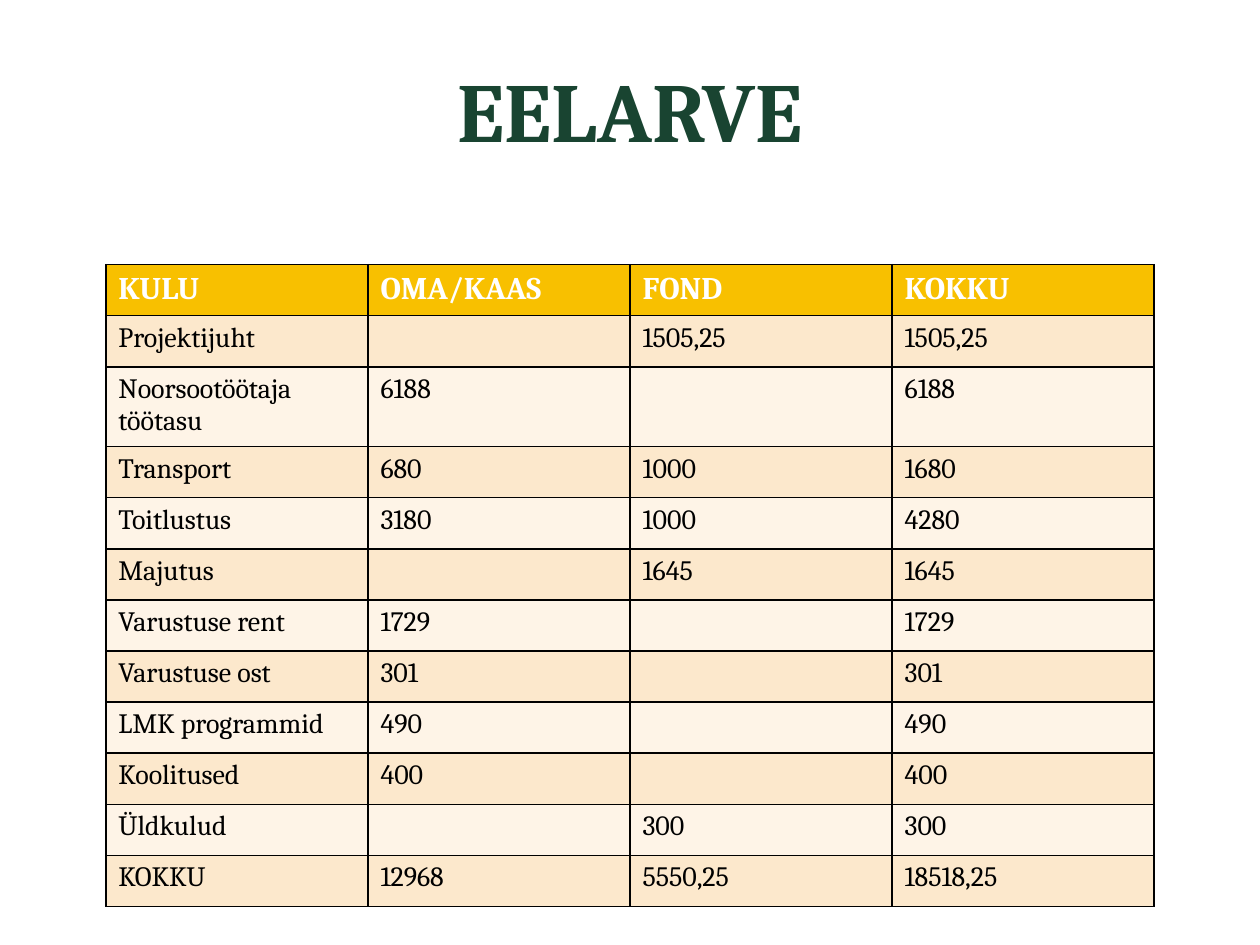
import pptx
import pptx.util
import pptx.dml.color
import pptx.enum.text
from pptx.oxml import parse_xml
from pptx.util import Inches

FONT = "Cambria"
NS = "http://schemas.openxmlformats.org/drawingml/2006/main"
COLORS = {
    "title": "194431", "head": "F8C000", "odd": "FCE8CC", "even": "FEF4E7",
    "white": "FFFFFF", "black": "000000",
}
ROWS = [
    ("KULU", "OMA/KAAS", "FOND", "KOKKU"),
    ("Projektijuht", "", "1505,25", "1505,25"),
    ("Noorsootöötaja töötasu", "6188", "", "6188"),
    ("Transport", "680", "1000", "1680"),
    ("Toitlustus", "3180", "1000", "4280"),
    ("Majutus", "", "1645", "1645"),
    ("Varustuse rent", "1729", "", "1729"),
    ("Varustuse ost", "301", "", "301"),
    ("LMK programmid", "490", "", "490"),
    ("Koolitused", "400", "", "400"),
    ("Üldkulud", "", "300", "300"),
    ("KOKKU", "12968", "5550,25", "18518,25"),
]


def color(name):
    return pptx.dml.color.RGBColor.from_string(COLORS[name])


def write(frame, text, size=16, ink="black", bold=False, align=None):
    para = frame.paragraphs[0]
    para.alignment = align
    para.font.size = pptx.util.Pt(size)
    if not text:
        return
    run = para.add_run()
    run.text = text
    font = run.font
    font.name, font.size, font.bold = FONT, pptx.util.Pt(size), bold
    font.color.rgb = color(ink)


def rule(cell):
    """Draw a 1 pt line on all four sides; call before setting the fill."""
    props = cell._tc.get_or_add_tcPr()
    for side in ("lnL", "lnR", "lnT", "lnB"):
        props.append(parse_xml(
            f'<a:{side} xmlns:a="{NS}" w="12700"><a:solidFill>'
            f'<a:srgbClr val="{COLORS["black"]}"/></a:solidFill></a:{side}>'))


def title(slide, left, top, width, height):
    frame = slide.shapes.add_textbox(left, top, width, height).text_frame
    frame.word_wrap = True
    frame.vertical_anchor = pptx.enum.text.MSO_ANCHOR.MIDDLE
    write(frame, "EELARVE", size=48, ink="title", bold=True,
          align=pptx.enum.text.PP_ALIGN.CENTER)


def budget(slide, left, top, width, height):
    table = slide.shapes.add_table(
        len(ROWS), len(ROWS[0]), left, top, width, height).table
    for r, row in enumerate(ROWS):
        fill = "head" if r == 0 else "odd" if r % 2 else "even"
        style = {"size": 18, "ink": "white", "bold": True} if r == 0 else {}
        for c, text in enumerate(row):
            cell = table.cell(r, c)
            rule(cell)
            cell.fill.solid()
            cell.fill.fore_color.rgb = color(fill)
            write(cell.text_frame, text, **style)
    # The third row holds two lines of text.
    table.rows[2].height = Inches(0.61)


def main():
    deck = pptx.Presentation()
    deck.slide_width, deck.slide_height = Inches(10), Inches(7.5)
    slide = deck.slides.add_slide(deck.slide_layouts[6])
    left, width = Inches(0.84), Inches(8.32)
    title(slide, left, Inches(0.09), width, Inches(1.55))
    budget(slide, left, Inches(2.1), width, Inches(4.87))
    deck.save("out.pptx")


if __name__ == "__main__":
    main()
